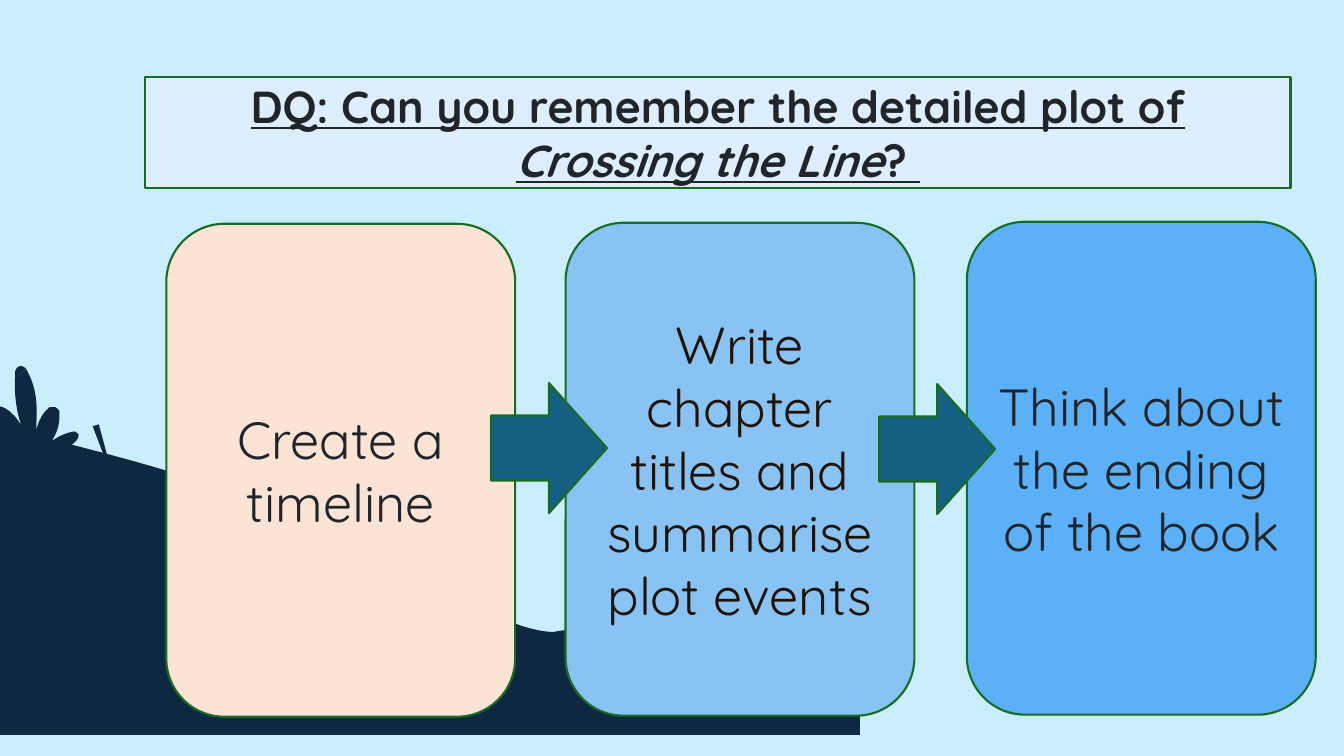
from lxml import etree
from pptx import Presentation
from pptx.dml.color import RGBColor
from pptx.enum import shapes, text
from pptx.oxml import ns
from pptx.util import Inches, Pt

FONT = "Quicksand"
COLORS = {
    "sky": "CAEEFB", "hill": "0E2841", "border": "196B24", "arrow": "156082",
    "banner": "DDEEFF", "ink": "212529", "brown": "1F140C",
    "peach": "FBE3D6", "light": "89C3F3", "bright": "5BB0F7",
}
QUESTION = [
    ("DQ: Can you remember the detailed plot of ", False),
    ("Crossing the Line", True),
    ("? ", False),
]
STEPS = [
    ("Create a timeline", "peach", "ink", 1.65, 2.22),
    ("Write chapter titles and summarise plot events", "light", "brown", 5.61, 2.21),
    ("Think about the ending of the book", "bright", "ink", 9.59, 2.2),
]
ARROWS = [(4.87, 3.8), (8.72, 3.81)]
CARD_SIZE = (3.46, 4.89)
ARROW_SIZE = (1.15, 1.29)

HILL = [
    (-0.3, 4.18), (-0.3, 7.29), (8.53, 7.29), (8.53, 6.64), (7.91, 6.41),
    (7.91, 6.41, 7.9, 6.41, 7.89, 6.41), (7.84, 6.41, 7.74, 6.41, 7.67, 6.36),
    (7.57, 6.29, 7.21, 6.15, 7.12, 6.09), (7.11, 6.08, 7.09, 6.08, 7.06, 6.08),
    (6.9, 6.08, 6.47, 6.22, 6.31, 6.22), (6.31, 6.22, 6.31, 6.22, 6.31, 6.22),
    (6.29, 6.22, 6.26, 6.22, 6.24, 6.22), (6.04, 6.22, 5.68, 6.24, 5.54, 6.26),
    (5.52, 6.26, 5.51, 6.27, 5.49, 6.27), (5.32, 6.27, 5, 6.17, 4.85, 6.05),
    (4.69, 5.91, 4.15, 5.46, 4.05, 5.45), (3.95, 5.43, 2.53, 5.31, 2.48, 5.3),
    (2.44, 5.29, 2.11, 4.88, 1.98, 4.79), (1.85, 4.69, 0.05, 4.23, -0.3, 4.18),
]
LEAF_TIP = [
    (0.21, 3.63), (0.21, 3.63, 0.21, 3.63, 0.21, 3.63),
    (0.19, 3.63, 0.17, 3.64, 0.16, 3.66), (0.15, 3.67, 0.15, 3.69, 0.15, 3.71),
    (0.15, 3.72, 0.15, 3.73, 0.15, 3.74), (0.19, 3.71, 0.23, 3.69, 0.26, 3.66),
    (0.25, 3.65, 0.23, 3.63, 0.21, 3.63),
]
PLANT_FOOT = [
    (0.44, 4.45), (0.5, 4.46, 0.56, 4.47, 0.63, 4.48),
    (0.63, 4.48, 0.63, 4.48, 0.63, 4.48),
]
PLANT = [
    (0.26, 3.66), (0.23, 3.69, 0.19, 3.71, 0.15, 3.74),
    (0.14, 3.9, 0.16, 4.06, 0.21, 4.22), (0.17, 4.15, 0.12, 4.09, 0.05, 4.05),
    (0.03, 4.04, 0.01, 4.03, -0.01, 4.03), (-0.02, 4.03, -0.03, 4.03, -0.04, 4.03),
    (-0.07, 4.05, -0.07, 4.08, -0.06, 4.1), (-0.05, 4.2, -0.01, 4.31, 0.06, 4.39),
    (0.19, 4.41, 0.32, 4.43, 0.44, 4.45), (0.63, 4.48),
    (0.67, 4.45, 0.72, 4.41, 0.76, 4.37), (0.77, 4.35, 0.79, 4.33, 0.78, 4.31),
    (0.77, 4.3, 0.76, 4.29, 0.74, 4.28), (0.74, 4.28),
    (0.72, 4.28, 0.71, 4.29, 0.69, 4.29), (0.62, 4.31, 0.56, 4.34, 0.51, 4.38),
    (0.56, 4.31, 0.59, 4.22, 0.59, 4.13), (0.59, 4.12, 0.59, 4.1, 0.59, 4.08),
    (0.58, 4.06, 0.57, 4.05, 0.55, 4.04), (0.55, 4.04, 0.54, 4.04, 0.54, 4.04),
    (0.52, 4.04, 0.51, 4.04, 0.49, 4.04), (0.48, 4.05, 0.46, 4.07, 0.45, 4.08),
    (0.4, 4.14, 0.37, 4.21, 0.36, 4.28), (0.36, 4.18, 0.37, 4.08, 0.36, 3.98),
    (0.35, 3.87, 0.32, 3.77, 0.27, 3.68), (0.27, 3.67, 0.27, 3.67, 0.26, 3.66),
]
TWIG = [(0.98, 4.21), (0.92, 4.23), (1.05, 4.57), (1.08, 4.58), (0.98, 4.21)]


def rgb(name):
    return RGBColor.from_string(COLORS[name])


def add_silhouette(slide, outline):
    start, *segments = outline
    vertices = [
        (Inches(segment[i]), Inches(segment[i + 1]))
        for segment in segments for i in range(0, len(segment), 2)
    ]
    builder = slide.shapes.build_freeform(*map(Inches, start))
    builder.add_line_segments(vertices, close=True)
    silhouette = builder.convert_to_shape()
    silhouette.shadow.inherit = False
    silhouette.fill.solid()
    silhouette.fill.fore_color.rgb = rgb("hill")
    silhouette.line.fill.background()

    strokes = iter(list(silhouette._element.iter(ns.qn("a:lnTo"))))
    for segment in segments:
        stroke = next(strokes)
        if len(segment) == 6:
            curve = etree.Element(ns.qn("a:cubicBezTo"))
            stroke.addprevious(curve)
            for part in (stroke, next(strokes), next(strokes)):
                curve.append(part[0])
                part.getparent().remove(part)


def add_panel(slide, kind, left, top, size, fill):
    panel = slide.shapes.add_shape(kind, *map(Inches, (left, top, *size)))
    panel.shadow.inherit = False
    panel.fill.solid()
    panel.fill.fore_color.rgb = rgb(fill)
    panel.line.color.rgb = rgb("border")
    panel.line.width = Pt(1.5)
    return panel


def write(panel, runs, size, color):
    frame = panel.text_frame
    frame.word_wrap = True
    frame.vertical_anchor = text.MSO_ANCHOR.MIDDLE
    paragraph = frame.paragraphs[0]
    paragraph.alignment = text.PP_ALIGN.CENTER
    paragraph.font.name = FONT
    paragraph.font.size = Pt(size)
    paragraph.font.color.rgb = rgb(color)
    for words, italic in runs:
        run = paragraph.add_run()
        run.text = words
        if italic:
            run.font.italic = True
    return paragraph


def main():
    deck = Presentation()
    deck.slide_width, deck.slide_height = Inches(13.33), Inches(7.5)
    slide = deck.slides.add_slide(deck.slide_layouts[6])
    slide.background.fill.solid()
    slide.background.fill.fore_color.rgb = rgb("sky")

    for outline in (HILL, LEAF_TIP, PLANT_FOOT, PLANT, TWIG):
        add_silhouette(slide, outline)

    kinds = shapes.MSO_SHAPE
    for words, fill, ink, left, top in STEPS:
        card = add_panel(slide, kinds.ROUNDED_RECTANGLE, left, top, CARD_SIZE, fill)
        write(card, [(words, False)], 37.3, ink)

    for left, top in ARROWS:
        add_panel(slide, kinds.RIGHT_ARROW, left, top, ARROW_SIZE, "arrow")

    banner = add_panel(slide, kinds.RECTANGLE, 1.44, 0.76, (11.36, 1.11), "banner")
    question = write(banner, QUESTION, 32, "ink")
    question.font.bold = True
    question.font.underline = True

    deck.save("out.pptx")


if __name__ == "__main__":
    main()
